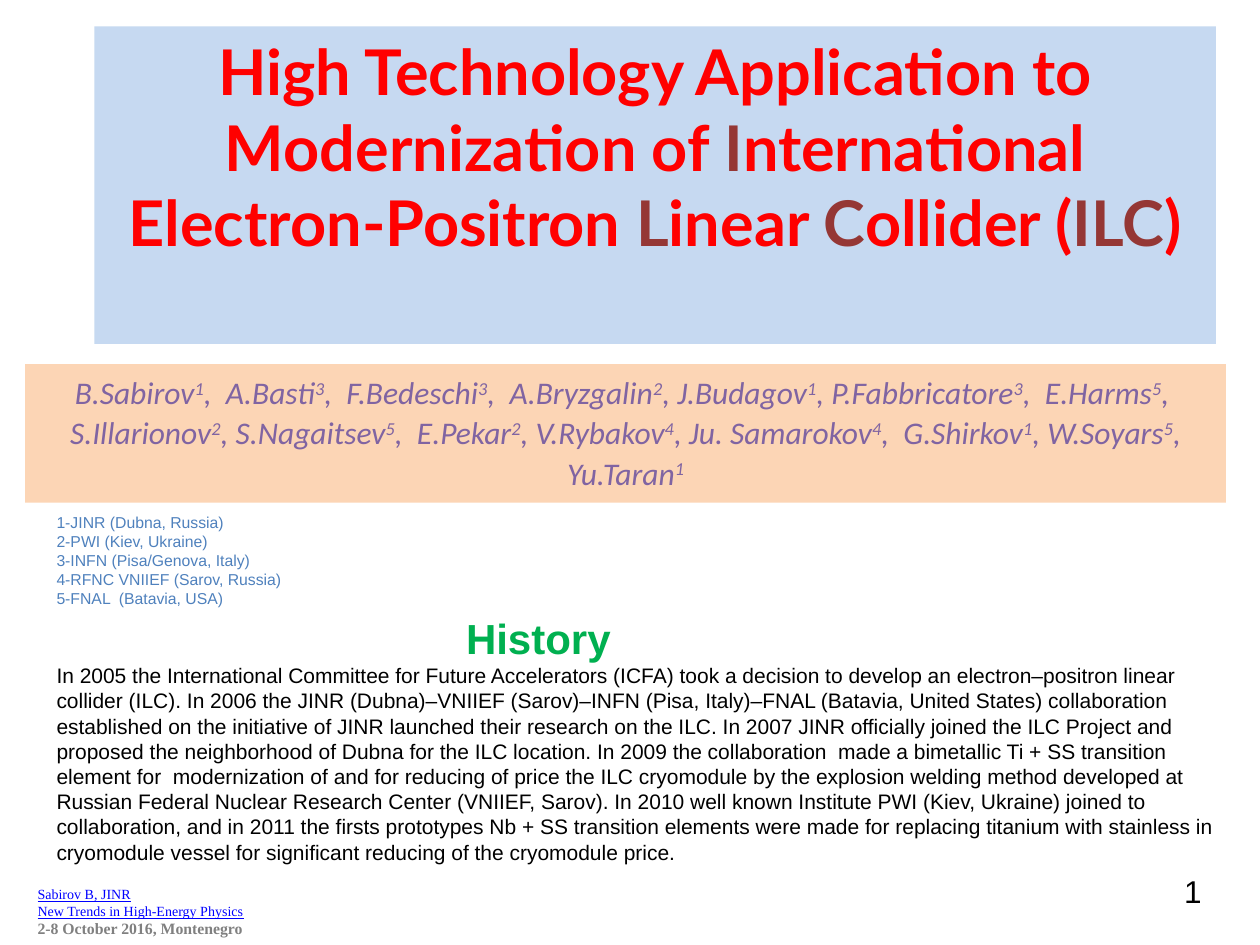
"""Build the title slide on the linear collider modernization."""
from dataclasses import dataclass
from typing import Optional

from pptx import Presentation
from pptx.dml.color import RGBColor
from pptx.enum import shapes, text
from pptx.util import Inches, Pt

HUES = {
    "sky": "C6D9F1", "peach": "FCD5B5", "red": "FF0000", "wine": "953735",
    "violet": "8064A2", "blue": "4F81BD", "link": "0000FF", "gray": "808080",
    "green": "00B050", "black": "000000",
}


@dataclass
class Para:
    """A paragraph; pieces between bars take the accent hue, between carets are raised."""
    words: str
    size: float
    face: str
    hue: str
    bold: bool = False
    slant: bool = False
    under: bool = False
    accent: str = ""
    center: bool = False
    indent: float = 0
    pitch: Optional[float] = None
    after: float = 0


@dataclass
class Box:
    """A text block with an optional fill."""
    left: float
    top: float
    width: float
    height: float
    paras: list[Para]
    fill: str = ""


def color(name: str) -> RGBColor:
    """Return the named colour."""
    return RGBColor.from_string(HUES[name])


def write(para, item: Para) -> None:
    """Fill one paragraph."""
    props = para._p.get_or_add_pPr()
    if item.indent:
        props.set("marL", str(Inches(item.indent)))
    if item.center:
        para.alignment = text.PP_ALIGN.CENTER
    if item.pitch:
        para.line_spacing = item.pitch
    para.space_after = Pt(item.after)
    font = para.font
    font.name, font.size = item.face, Pt(item.size)
    font.bold, font.italic, font.underline = item.bold, item.slant, item.under
    if not item.accent:
        font.color.rgb = color(item.hue)
    mark = "|" if item.accent else "^"
    for spot, piece in enumerate(item.words.split(mark)):
        if not piece:
            continue
        run = para.add_run()
        run.text = piece
        odd = spot % 2 == 1
        if item.accent:
            run.font.color.rgb = color(item.accent if odd else item.hue)
        elif odd:
            run._r.get_or_add_rPr().set("baseline", "30000")


def draw(slide, box: Box) -> None:
    """Draw one block with its paragraphs."""
    area = [Inches(n) for n in (box.left, box.top, box.width, box.height)]
    if box.fill:
        shape = slide.shapes.add_shape(shapes.MSO_SHAPE.RECTANGLE, *area)
        shape.shadow.inherit = False
        shape.fill.solid()
        shape.fill.fore_color.rgb = color(box.fill)
        shape.line.fill.background()
    else:
        shape = slide.shapes.add_textbox(*area)
    frame = shape.text_frame
    frame.word_wrap = True
    frame.vertical_anchor = text.MSO_ANCHOR.TOP
    for spot, item in enumerate(box.paras):
        write(frame.add_paragraph() if spot else frame.paragraphs[0], item)


TITLE = ("High Technology Application to Modernization of |I|nternational "
         "Electron-Positron |L|inear |C|ollider (|ILC|)")
NAMES = ("B.Sabirov^1^,  A.Basti^3^,  F.Bedeschi^3^,  A.Bryzgalin^2^, J.Budagov^1^, "
         "P.Fabbricatore^3^,  E.Harms^5^,  S.Illarionov^2^, S.Nagaitsev^5^,  "
         "E.Pekar^2^, V.Rybakov^4^, Ju. Samarokov^4^,  G.Shirkov^1^, "
         "W.Soyars^5^, Yu.Taran^1^")
LABS = ("1-JINR (Dubna, Russia)", "2-PWI (Kiev, Ukraine)",
        "3-INFN (Pisa/Genova, Italy)", "4-RFNC VNIIEF (Sarov, Russia)",
        "5-FNAL  (Batavia, USA)")
STORY = (
    "In 2005 the International Committee for Future Accelerators (ICFA) took a "
    "decision to develop an electron–positron linear collider (ILC).",
    "In 2006 the JINR (Dubna)–VNIIEF (Sarov)–INFN (Pisa, Italy)–FNAL (Batavia, "
    "United States) collaboration established on the initiative of JINR launched "
    "their research on the ILC.",
    "In 2007 JINR officially joined the ILC Project and proposed the "
    "neighborhood of Dubna for the ILC location.",
    "In 2009 the collaboration  made a bimetallic Ti + SS transition element for  "
    "modernization of and for reducing of price the ILC cryomodule by the explosion "
    "welding method developed at Russian Federal Nuclear Research Center "
    "(VNIIEF, Sarov).",
    "In 2010 well known Institute PWI (Kiev, Ukraine) joined to collaboration, and "
    "in 2011 the firsts prototypes Nb + SS transition elements were made for "
    "replacing titanium with stainless in cryomodule vessel for significant "
    "reducing of the cryomodule price.",
)
SERIF = "Times New Roman"
BOXES = [
    Box(9.3, 6.87, 0.34, 0.4, [Para("1", 18, "Arial", "black")]),
    Box(0.75, 0.21, 8.9, 2.52,
        [Para(TITLE, 36, "Lato", "red", bold=True, accent="wine", center=True)], "sky"),
    Box(0.35, 4.02, 2.08, 0.86, [Para(lab, 9, "Arial", "blue") for lab in LABS]),
    Box(0.2, 2.89, 9.53, 1.1,
        [Para(NAMES, 18, "Calibri", "violet", slant=True, center=True,
              pitch=1.07, after=10)], "peach"),
    Box(0.2, 6.98, 2.04, 0.52, [
        Para("Sabirov B, JINR", 8, SERIF, "link", under=True),
        Para("New Trends in High-Energy Physics", 8, SERIF, "link", under=True),
        Para("2-8 October 2016, Montenegro", 9, SERIF, "gray", bold=True)]),
    Box(0.35, 4.81, 9.45, 2.12, [
        Para("History", 24, "Arial", "green", bold=True, indent=3.25),
        Para(" ".join(STORY), 12, "Arial", "black")]),
]


def main() -> None:
    """Build and save the slide."""
    deck = Presentation()
    deck.slide_width, deck.slide_height = Inches(10), Inches(7.5)
    slide = deck.slides.add_slide(deck.slide_layouts[6])
    for box in BOXES:
        draw(slide, box)
    deck.save("out.pptx")


if __name__ == "__main__":
    main()
